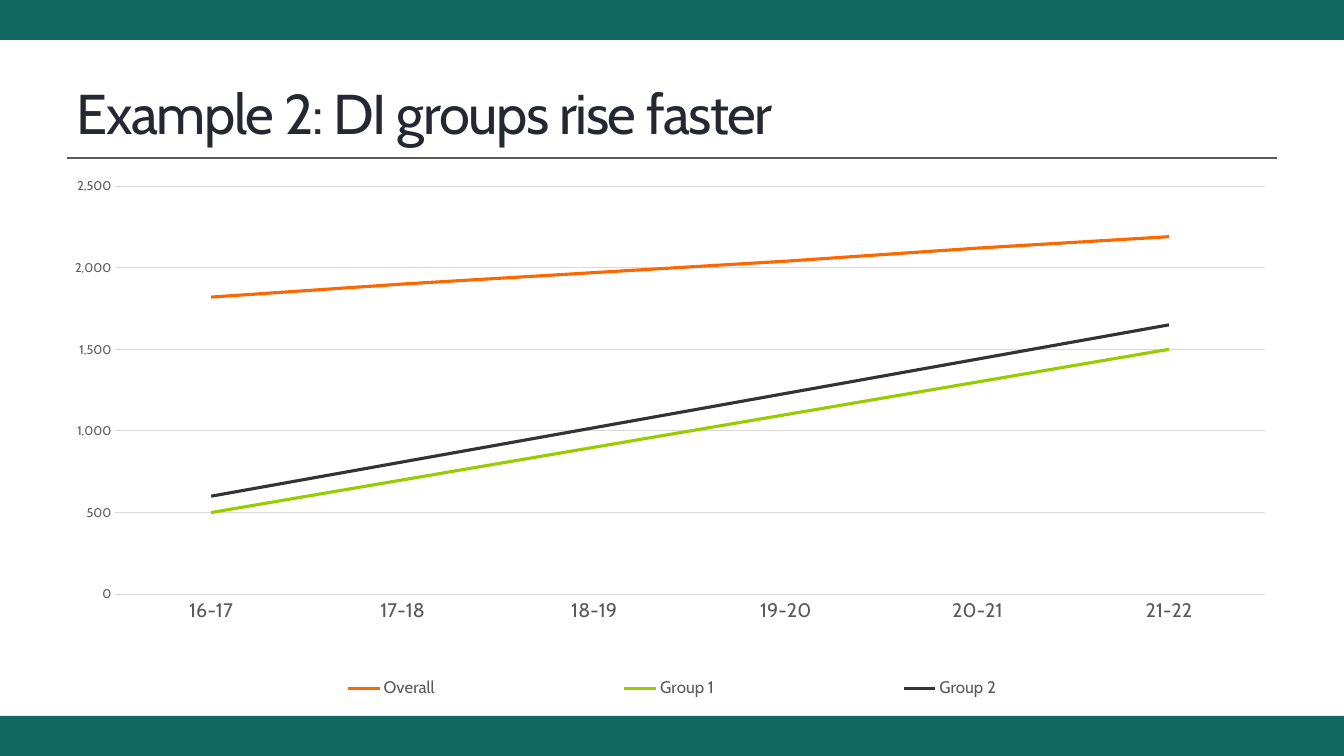
"""Builds a slide with a line chart comparing group growth with the overall count."""
from lxml import etree
from pptx import Presentation
from pptx.chart.data import CategoryChartData
from pptx.dml.color import RGBColor
from pptx.enum.chart import XL_CHART_TYPE, XL_LEGEND_POSITION, XL_MARKER_STYLE, XL_TICK_MARK
from pptx.enum.shapes import MSO_CONNECTOR, MSO_SHAPE
from pptx.enum.text import MSO_ANCHOR
from pptx.oxml.ns import qn
from pptx.util import Pt

TITLE = "Example 2: DI groups rise faster"
YEARS = ["16-17", "17-18", "18-19", "19-20", "20-21", "21-22"]
SERIES = [
    ("Overall", "FF6600", [1820, 1900, 1970, 2040, 2120, 2190]),
    ("Group 1", "99CC00", [500, 700, 900, 1100, 1300, 1500]),
    ("Group 2", "333333", [600, 810, 1020, 1230, 1440, 1650]),
]
PLOT_LAYOUT = {"layoutTarget": "inner", "xMode": "edge", "yMode": "edge",
               "x": 0.04, "y": 0.03, "w": 0.95, "h": 0.76}
LEGEND_LAYOUT = {"xMode": "edge", "yMode": "edge",
                 "x": 0.08, "y": 0.93, "w": 0.84, "h": 0.07}

FONT = "Cabin"
TEAL, INK, GRAY, GRID = "126964", "252731", "595959", "D9D9D9"
EMU_PER_PX = 914400 / 100.8
WIDTH, HEIGHT = 1344, 756
BAND_HEIGHT = 40
MARGIN = 67
CONTENT_WIDTH = WIDTH - 2 * MARGIN
RULE_Y = 158
TITLE_TOP, TITLE_HEIGHT = 58, 109
CHART_TOP, CHART_HEIGHT = 170, 537

LINE_CHART = XL_CHART_TYPE.LINE
BOTTOM = XL_LEGEND_POSITION.BOTTOM
NO_MARKER = XL_MARKER_STYLE.NONE
NO_TICK = XL_TICK_MARK.NONE
RECTANGLE = MSO_SHAPE.RECTANGLE
STRAIGHT = MSO_CONNECTOR.STRAIGHT
MIDDLE = MSO_ANCHOR.MIDDLE


def px(*lengths):
    return [round(length * EMU_PER_PX) for length in lengths]


def color(value):
    return RGBColor.from_string(value)


def style_font(font, size, value):
    font.name, font.size = FONT, Pt(size)
    font.color.rgb = color(value)


def style_line(line, value, width):
    line.color.rgb = color(value)
    line.width = Pt(width)


def add_band(slide, top):
    band = slide.shapes.add_shape(RECTANGLE, *px(0, top, WIDTH, BAND_HEIGHT))
    band.shadow.inherit = False
    band.fill.solid()
    band.fill.fore_color.rgb = color(TEAL)
    band.line.fill.background()


def add_rule(slide):
    rule = slide.shapes.add_connector(STRAIGHT, *px(MARGIN, RULE_Y, WIDTH - MARGIN, RULE_Y))
    style_line(rule.line, GRAY, 1)
    etree.SubElement(rule._element.spPr, qn("a:effectLst"))


def add_text(slide, text, *, box, size, value, spacing):
    frame = slide.shapes.add_textbox(*px(*box)).text_frame
    frame.word_wrap = True
    frame.vertical_anchor = MIDDLE
    run = frame.paragraphs[0].add_run()
    run.text = text
    style_font(run.font, size, value)
    run.font._element.set("spc", str(spacing * 100))


def set_layout(parent, before, settings):
    for old in parent.findall(qn("c:layout")):
        parent.remove(old)
    layout = etree.Element(qn("c:layout"))
    manual = etree.SubElement(layout, qn("c:manualLayout"))
    for name, value in settings.items():
        etree.SubElement(manual, qn(f"c:{name}")).set("val", str(value))
    before.addprevious(layout)


def style_axis(axis, size):
    axis.major_tick_mark = axis.minor_tick_mark = NO_TICK
    style_font(axis.tick_labels.font, size, GRAY)


def add_line_chart(slide):
    data = CategoryChartData(number_format="#,##0")
    data.categories = YEARS
    for name, _, values in SERIES:
        data.add_series(name, values)
    box = px(MARGIN, CHART_TOP, CONTENT_WIDTH, CHART_HEIGHT)
    chart = slide.shapes.add_chart(LINE_CHART, *box, data).chart
    style_font(chart.font, 10, "000000")
    chart.has_title = False
    chart.plots[0].vary_by_categories = False
    for series, (_, value, _) in zip(chart.plots[0].series, SERIES):
        series.smooth = False
        series.marker.style = NO_MARKER
        style_line(series.format.line, value, 2.25)

    style_axis(chart.category_axis, 14)
    style_line(chart.category_axis.format.line, GRID, 0.75)
    value_axis = chart.value_axis
    style_axis(value_axis, 9)
    value_axis.minimum_scale, value_axis.maximum_scale = 0, 2500
    value_axis.major_unit = 500
    value_axis.tick_labels.number_format = "#,##0"
    value_axis.tick_labels.number_format_is_linked = False
    value_axis.format.line.fill.background()
    style_line(value_axis.major_gridlines.format.line, GRID, 0.75)

    chart.has_legend = True
    legend = chart.legend
    legend.position = BOTTOM
    legend.include_in_layout = False
    style_font(legend.font, 12, GRAY)
    set_layout(legend._element, legend._element.find(qn("c:overlay")), LEGEND_LAYOUT)
    plot_area = chart._chartSpace.chart.plotArea
    set_layout(plot_area, plot_area.find(qn("c:lineChart")), PLOT_LAYOUT)


def main():
    presentation = Presentation()
    presentation.slide_width, presentation.slide_height = px(WIDTH, HEIGHT)
    slide = presentation.slides.add_slide(presentation.slide_layouts[6])
    for top in (0, HEIGHT - BAND_HEIGHT):
        add_band(slide, top)
    add_rule(slide)
    add_text(slide, TITLE, box=(MARGIN, TITLE_TOP, CONTENT_WIDTH, TITLE_HEIGHT),
             size=40, value=INK, spacing=-1)
    add_line_chart(slide)
    presentation.save("out.pptx")


if __name__ == "__main__":
    main()
